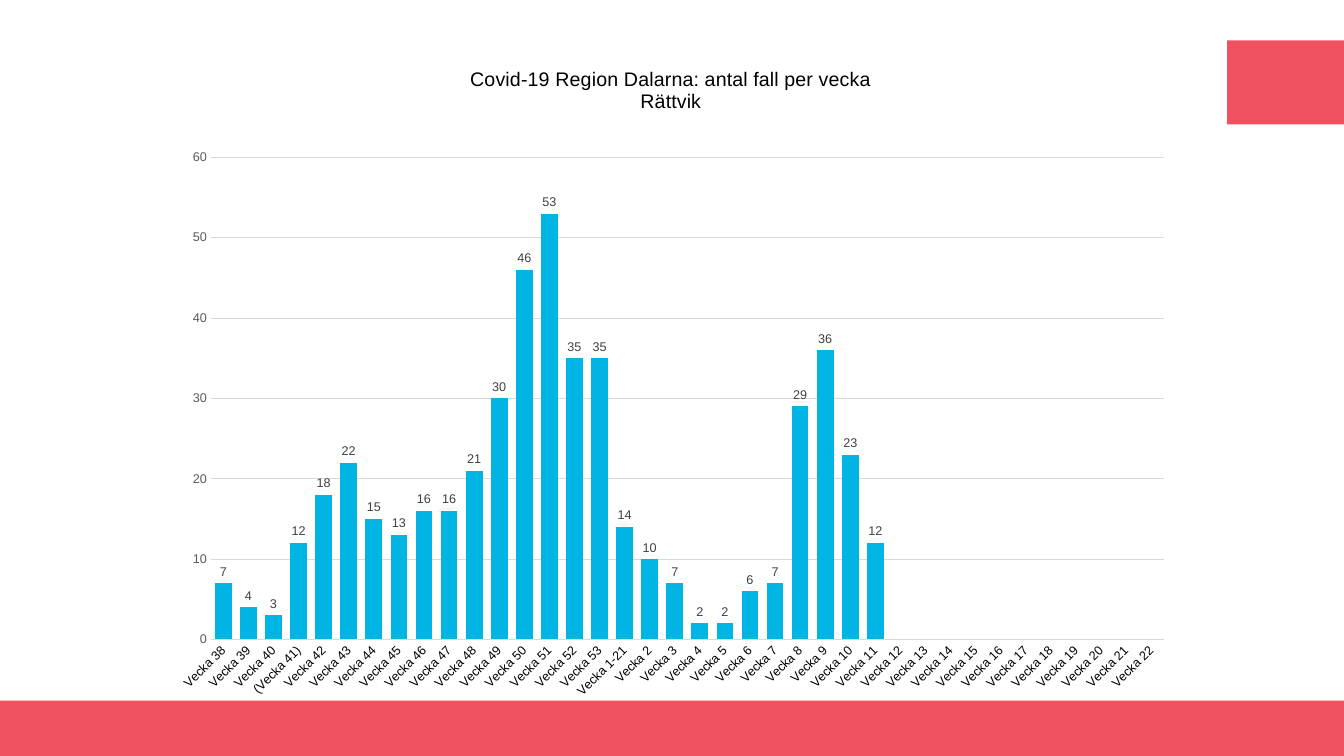
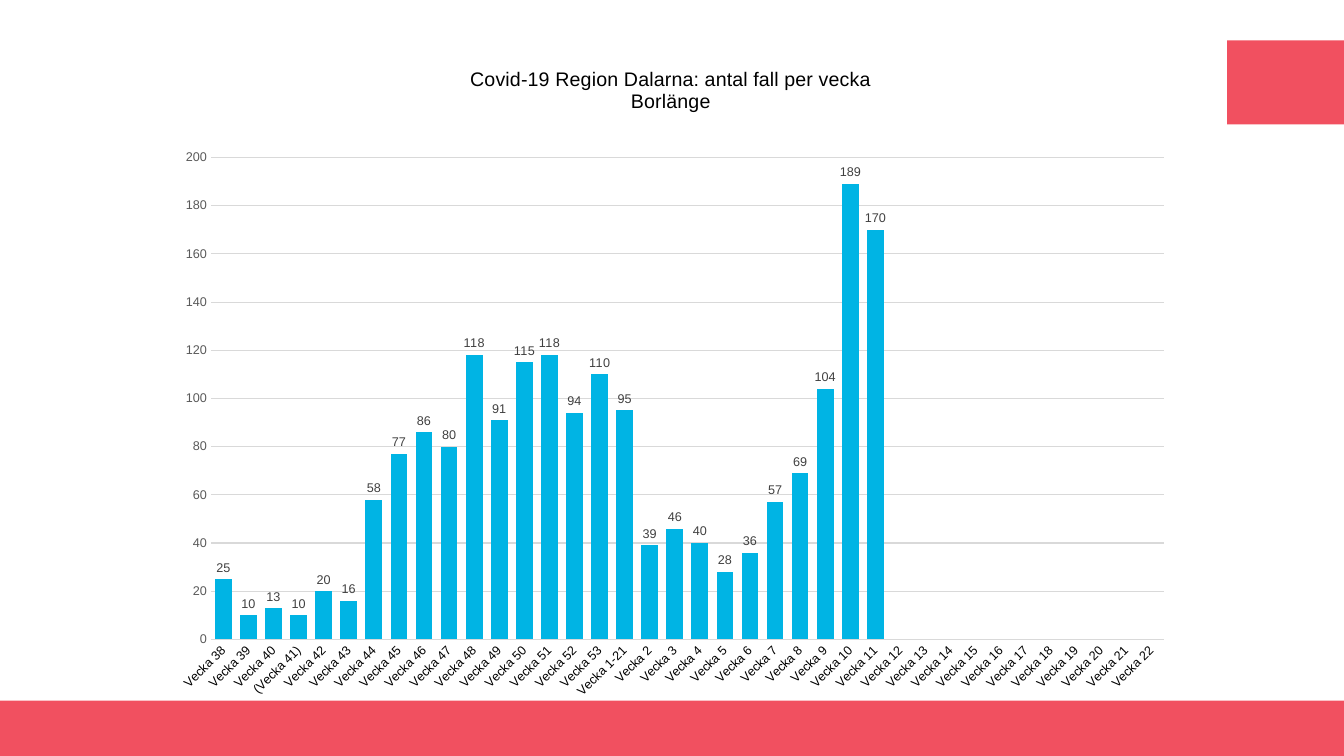
from lxml import etree
from pptx import Presentation
from pptx import util as u
from pptx.chart.data import CategoryChartData
from pptx.dml.color import RGBColor
from pptx.enum import chart as kinds, shapes, text
from pptx.oxml.ns import qn

CORAL = RGBColor(0xF1, 0x50, 0x60)
CYAN = RGBColor(0x00, 0xB4, 0xE4)
BLACK = RGBColor(0, 0, 0)
DARK = RGBColor(0x40, 0x40, 0x40)
GREY = RGBColor(0x59, 0x59, 0x59)
PALE = RGBColor(0xD9, 0xD9, 0xD9)
FONT = "Arial"
CELL = u.Inches(1) // 12  # the slide is 160 columns by 90 rows
COLS, ROWS = 160, 90

HEAD = "Covid-19 Region Dalarna: antal fall per vecka"
WEEKS = [f"Vecka {n}" for n in (*range(38, 54), "1-21", *range(2, 23))]
WEEKS[3] = f"({WEEKS[3]})"

# town, top of the scale, step of the scale, cases per week
TOWNS = [
    ("Rättvik", 60, 10,
     [7, 4, 3, 12, 18, 22, 15, 13, 16, 16, 21, 30, 46, 53, 35, 35, 14,
      10, 7, 2, 2, 6, 7, 29, 36, 23, 12]),
    ("Borlänge", 200, 20,
     [25, 10, 13, 10, 20, 16, 58, 77, 86, 80, 118, 91, 115, 118, 94, 110, 95,
      39, 46, 40, 28, 36, 57, 69, 104, 189, 170]),
]


def style(font, size, color):
    font.name, font.size, font.bold = FONT, u.Pt(size), False
    font.color.rgb = color


def rule(line):
    line.color.rgb, line.width = PALE, u.Pt(0.75)


def pin(part, index, **shares):
    """Fix a chart part's place, in shares of the chart's size."""
    for old in part.findall(qn("c:layout")):
        part.remove(old)
    layout = etree.Element(qn("c:layout"))
    manual = etree.SubElement(layout, qn("c:manualLayout"))
    if "w" in shares:
        etree.SubElement(manual, qn("c:layoutTarget"), val="inner")
    for key in ("x", "y"):
        etree.SubElement(manual, qn(f"c:{key}Mode"), val="edge")
    for key, share in shares.items():
        etree.SubElement(manual, qn(f"c:{key}"), val=str(share))
    part.insert(index, layout)


class Deck:
    def __init__(self):
        self.file = Presentation()
        self.file.slide_width = COLS * CELL
        self.file.slide_height = ROWS * CELL
        self.base = self.file.slide_layouts[6]
        self.slide = None

    def add(self):
        self.slide = self.file.slides.add_slide(self.base)

    def grid(self, *cells):
        return [u.Emu(round(n * CELL)) for n in cells]

    def band(self, *cells):
        """Draw a coral block and move it to the shared layout."""
        block = self.slide.shapes.add_shape(
            shapes.MSO_SHAPE.RECTANGLE, *self.grid(*cells))
        block.shadow.inherit = False
        block.fill.solid()
        block.fill.fore_color.rgb = CORAL
        block.line.fill.background()
        self.base.shapes.element.append(block.element)

    def chart(self, town, top, step, cases, *cells):
        data = CategoryChartData()
        data.categories = WEEKS
        data.add_series("Antal fall", cases + [None] * (len(WEEKS) - len(cases)))
        chart = self.slide.shapes.add_chart(
            kinds.XL_CHART_TYPE.COLUMN_CLUSTERED, *self.grid(*cells), data).chart
        style(chart.font, 10, BLACK)
        chart.has_legend = False
        self.title(chart, HEAD, town)
        self.bars(chart.plots[0])
        self.axes(chart, top, step)
        area = chart.element.xpath("c:chart/c:plotArea")[0]
        pin(area, 0, x=0.05, y=0.17, w=0.93, h=0.72)

    def title(self, chart, *lines):
        chart.has_title = True
        title = chart.chart_title
        frame = title.text_frame
        frame.text = "\n".join(lines)
        for para in frame.paragraphs:
            para.alignment = text.PP_ALIGN.CENTER
            style(para.font, 14, BLACK)
        title.include_in_layout = False
        pin(title.element, 1, x=0.3, y=0.03)

    def bars(self, plot):
        plot.gap_width, plot.overlap = 50, -27
        plot.vary_by_categories = False
        fill = plot.series[0].format.fill
        fill.solid()
        fill.fore_color.rgb = CYAN
        plot.has_data_labels = True
        labels = plot.data_labels
        labels.show_value = True
        labels.position = kinds.XL_LABEL_POSITION.OUTSIDE_END
        style(labels.font, 9, DARK)

    def axes(self, chart, top, step):
        weeks, count = chart.category_axis, chart.value_axis
        for axis, color in ((weeks, BLACK), (count, GREY)):
            axis.major_tick_mark = kinds.XL_TICK_MARK.NONE
            axis.minor_tick_mark = kinds.XL_TICK_MARK.NONE
            style(axis.tick_labels.font, 9, color)
        rule(weeks.format.line)
        chart.element.xpath(".//c:catAx/c:txPr/a:bodyPr")[0].set("rot", "-2700000")
        count.minimum_scale, count.maximum_scale = 0, top
        count.major_unit = step
        count.format.line.fill.background()
        rule(count.major_gridlines.format.line)


def main():
    deck = Deck()
    for index, town in enumerate(TOWNS):
        deck.add()
        if index == 0:
            deck.band(0, 83.4, COLS, 6.6)
            deck.band(146.1, 4.8, 13.9, 10)
        deck.chart(*town, 19, 5.2, 122, 79.7)
    deck.file.save("out.pptx")


if __name__ == "__main__":
    main()
